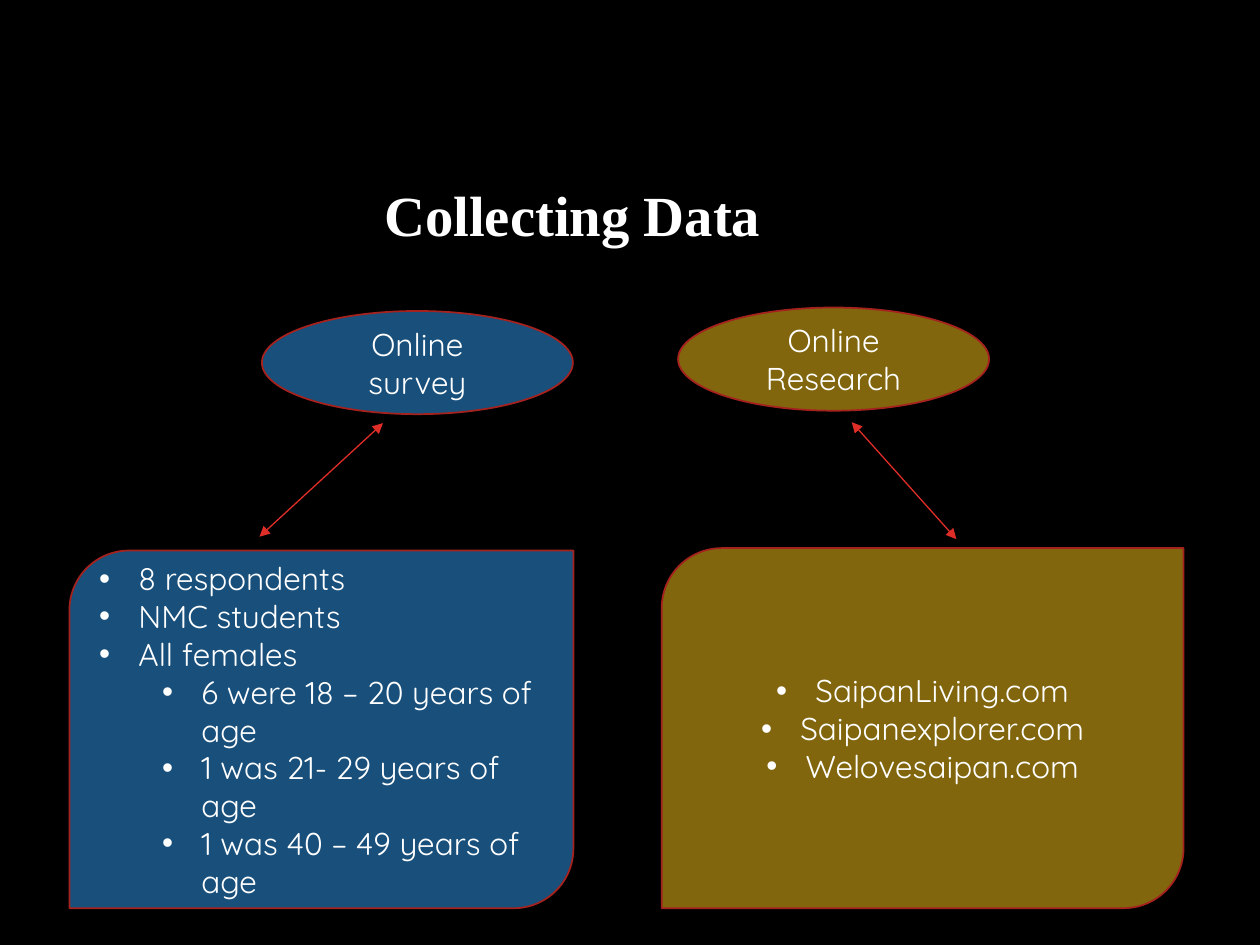
from pptx import Presentation
from pptx.dml.color import RGBColor
from pptx.enum.shapes import MSO_CONNECTOR, MSO_SHAPE
from pptx.enum.text import MSO_ANCHOR, PP_ALIGN
from pptx.oxml.ns import qn
from pptx.util import Cm, Pt
from lxml.etree import SubElement

COLORS = {
    "background": "000000",
    "text": "FFFFFF",
    "outline": "A5221E",
    "arrow": "DF2E28",
    "survey": "184F7B",
    "research": "81660E",
}
TITLE = "Collecting Data"
BODY_FONT = "Quicksand"
SOURCES = [
    {
        "name": "Online survey",
        "color": "survey",
        "oval": (5.28, 6.27, 6.27, 2.08),
        "arrow": (7.72, 8.53, 5.23, 10.82),
        "card": (1.4, 11.1, 10.16, 7.21),
        "align": PP_ALIGN.LEFT,
        "items": [
            (0, "8 respondents"),
            (0, "NMC students"),
            (0, "All females"),
            (1, "6 were 18 – 20 years of age"),
            (1, "1 was 21- 29 years of age"),
            (1, "1 was 40 – 49 years of age"),
        ],
    },
    {
        "name": "Online Research",
        "color": "research",
        "oval": (13.67, 6.2, 6.27, 2.08),
        "arrow": (17.17, 8.51, 19.28, 10.87),
        "card": (13.34, 11.05, 10.52, 7.26),
        "align": PP_ALIGN.CENTER,
        "items": [
            (0, "SaipanLiving.com"),
            (0, "Saipanexplorer.com"),
            (0, "Welovesaipan.com"),
        ],
    },
]


def rgb(name):
    return RGBColor.from_string(COLORS[name])


def set_font(p, name, size, bold=False):
    for r in p.runs:
        r.font.name = name
        r.font.size = Pt(size)
        r.font.bold = bold
        r.font.color.rgb = rgb("text")


def add_bullet(p, level):
    p.level = level
    pPr = p._p.get_or_add_pPr()
    pPr.set("marL", str(Cm(0.79 + 1.27 * level)))
    pPr.set("indent", str(-Cm(0.79)))
    SubElement(pPr, qn("a:buFont"), typeface="Arial")
    SubElement(pPr, qn("a:buChar"), char="•")


def add_panel(s, kind, box, color):
    sp = s.shapes.add_shape(kind, *[Cm(v) for v in box])
    sp.shadow.inherit = False
    sp.fill.solid()
    sp.fill.fore_color.rgb = rgb(color)
    sp.line.color.rgb = rgb("outline")
    sp.line.width = Pt(1)
    tf = sp.text_frame
    tf.word_wrap = True
    tf.vertical_anchor = MSO_ANCHOR.MIDDLE
    return tf


def add_arrow(s, ends):
    cx = s.shapes.add_connector(MSO_CONNECTOR.STRAIGHT, *[Cm(v) for v in ends])
    cx.line.color.rgb = rgb("arrow")
    cx.line.width = Pt(0.75)
    ln = cx.line._get_or_add_ln()
    for end in ("a:headEnd", "a:tailEnd"):
        SubElement(ln, qn(end), type="triangle")
    SubElement(cx._element.spPr, qn("a:effectLst"))


def add_source(s, source):
    tf = add_panel(s, MSO_SHAPE.OVAL, source["oval"], source["color"])
    tf.text = source["name"]
    p = tf.paragraphs[0]
    p.alignment = PP_ALIGN.CENTER
    set_font(p, BODY_FONT, 18)

    add_arrow(s, source["arrow"])

    tf = add_panel(s, MSO_SHAPE.ROUND_2_DIAG_RECTANGLE, source["card"], source["color"])
    for i, (level, text) in enumerate(source["items"]):
        p = tf.add_paragraph() if i else tf.paragraphs[0]
        p.text = text
        p.alignment = source["align"]
        add_bullet(p, level)
        set_font(p, BODY_FONT, 18)


def add_title(s):
    sp = s.shapes.title
    sp.left, sp.top, sp.width, sp.height = Cm(2.79), Cm(3.7), Cm(17.5), Cm(1.22)
    tf = sp.text_frame
    tf.text = TITLE
    tf.word_wrap = True
    tf.vertical_anchor = MSO_ANCHOR.MIDDLE
    p = tf.paragraphs[0]
    p.alignment = PP_ALIGN.CENTER
    set_font(p, "Times New Roman", 32.4, bold=True)


def main():
    prs = Presentation()
    prs.slide_width, prs.slide_height = Cm(25.4), Cm(19.05)
    s = prs.slides.add_slide(prs.slide_layouts[5])
    s.background.fill.solid()
    s.background.fill.fore_color.rgb = rgb("background")
    add_title(s)
    for source in SOURCES:
        add_source(s, source)
    prs.save("out.pptx")


if __name__ == "__main__":
    main()
